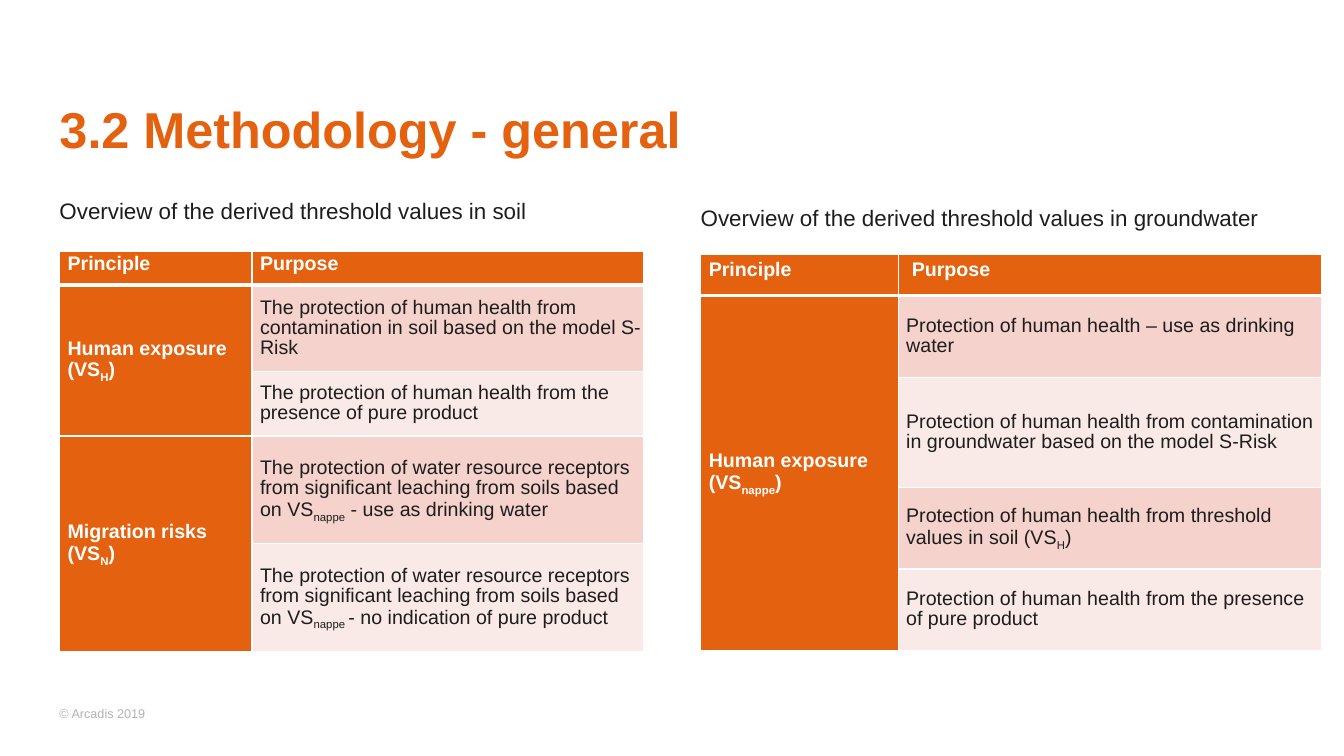
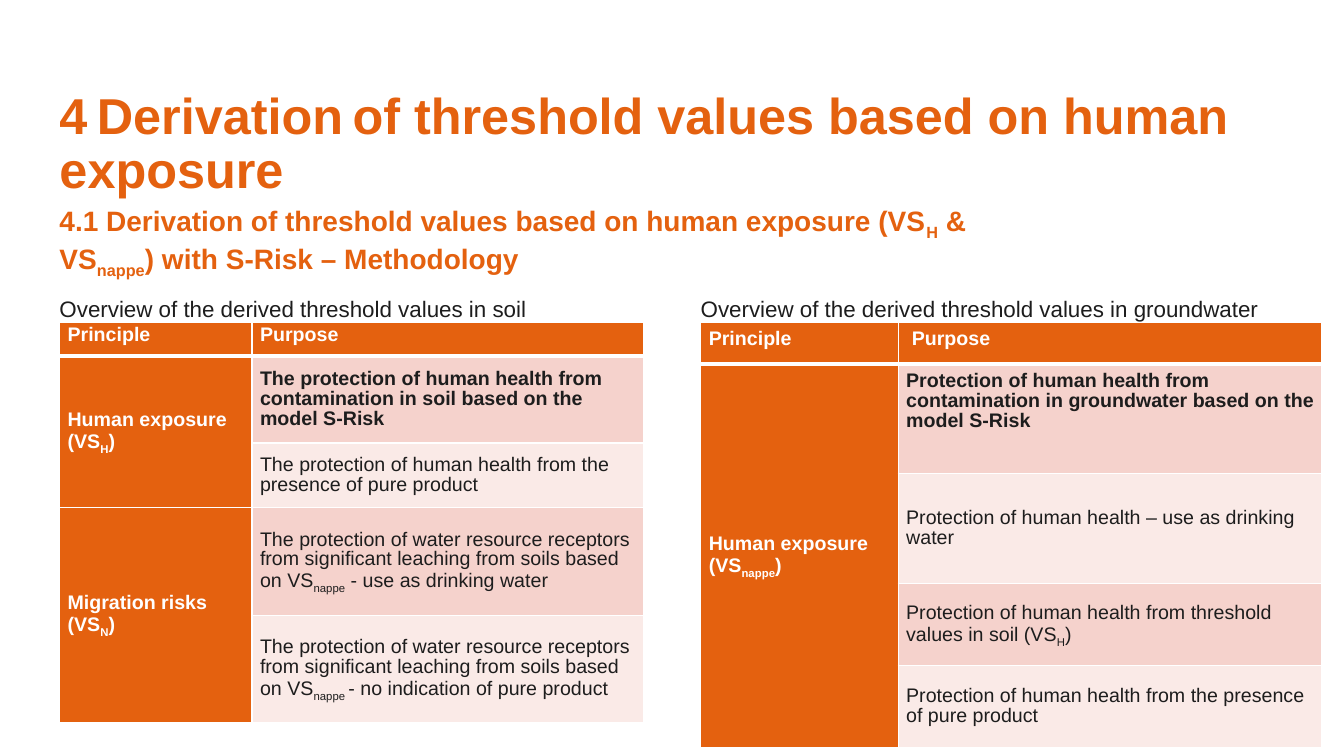
from dataclasses import dataclass

from lxml import etree
from pptx import Presentation
from pptx.dml.color import RGBColor
from pptx.enum.text import MSO_ANCHOR, MSO_AUTO_SIZE, PP_ALIGN
from pptx.oxml.ns import qn
from pptx.util import Pt

TOP, MIDDLE = MSO_ANCHOR.TOP, MSO_ANCHOR.MIDDLE
LEFT = PP_ALIGN.LEFT
FIXED_SIZE = MSO_AUTO_SIZE.NONE
TITLE_ONLY = 5


@dataclass(frozen=True)
class Theme:
    font: str = "Arial"
    orange: str = "E4610F"
    ink: str = "1D1D1D"
    grey: str = "B3B3B3"
    white: str = "FFFFFF"
    bands: tuple = ("F5D2CC", "FAEAE7")
    title_size: int = 36
    title_gap_size: int = 24
    subtitle_size: int = 20
    caption_size: int = 16
    table_size: int = 14
    footer_size: int = 9
    tight: float = 0.9
    padding: float = 5.76
    thin: int = 1
    thick: int = 3


@dataclass(frozen=True)
class Overview:
    """A caption and its table; groups pair a principle with (purpose, height) rows."""
    medium: str
    left: float
    caption_top: float
    table_top: float
    columns: tuple
    header_height: float
    groups: tuple
    purpose_inset: float = 0
    emphasise_first: bool = False
    first_anchor: int = MIDDLE


class Deck:
    def __init__(self, theme):
        self.theme = theme
        self.presentation = Presentation()
        self.presentation.slide_width = Pt(960)
        self.presentation.slide_height = Pt(540)
        self.slide = None

    def set_text(self, frame, marked, size, color, bold=False, spacing=1.0, marked_size=None):
        """Set text whose parts between ~ marks are subscripts, or take marked_size."""
        paragraph = frame.paragraphs[0]
        paragraph.alignment = LEFT
        paragraph.line_spacing = spacing
        for index, part in enumerate(marked.split("~")):
            if not part:
                continue
            run = paragraph.add_run()
            run.text = part
            special = index % 2 == 1
            part_size = marked_size if special and marked_size else size
            look = {"name": self.theme.font, "size": Pt(part_size), "bold": bold}
            for name, value in look.items():
                setattr(run.font, name, value)
            run.font.color.rgb = RGBColor.from_string(color)
            if special and not marked_size:
                run._r.get_or_add_rPr().set("baseline", "-25000")

    def set_frame(self, frame):
        layout = {"margin_left": 0, "margin_top": 0, "margin_right": 0, "margin_bottom": 0,
                  "word_wrap": True, "auto_size": FIXED_SIZE, "vertical_anchor": TOP}
        for name, value in layout.items():
            setattr(frame, name, value)

    def add_text(self, marked, left, top, width, height, size, color, bold=False):
        box = self.slide.shapes.add_textbox(Pt(left), Pt(top), Pt(width), Pt(height))
        self.set_frame(box.text_frame)
        self.set_text(box.text_frame, marked, size, color, bold)

    def add_slide(self, title, title_top):
        theme = self.theme
        layout = self.presentation.slide_layouts[TITLE_ONLY]
        self.slide = self.presentation.slides.add_slide(layout)
        heading = self.slide.shapes.title
        place = {"left": 42.5, "top": title_top, "width": 872.5, "height": 39.5}
        for name, value in place.items():
            setattr(heading, name, Pt(value))
        self.set_frame(heading.text_frame)
        self.set_text(heading.text_frame, title, theme.title_size, theme.orange, True,
                      theme.tight, theme.title_gap_size)
        self.add_text("© Arcadis 2019", 42.5, 504.5, 278, 11, theme.footer_size, theme.grey)

    def add_subtitle(self, marked):
        self.add_text(marked, 42.5, 145.5, 682, 48, self.theme.subtitle_size,
                      self.theme.orange, True)

    def set_borders(self, cell, top, bottom):
        properties = cell._tc.get_or_add_tcPr()
        thin = self.theme.thin
        for tag, width in {"lnL": thin, "lnR": thin, "lnT": top, "lnB": bottom}.items():
            line = etree.SubElement(properties, qn("a:" + tag), w=str(Pt(width)))
            fill = etree.SubElement(line, qn("a:solidFill"))
            etree.SubElement(fill, qn("a:srgbClr"), val=self.theme.white)

    def style_cell(self, cell, row, color):
        theme = self.theme
        self.set_borders(cell, theme.thick if row == 1 else theme.thin,
                         theme.thick if row == 0 else theme.thin)
        cell.fill.solid()
        cell.fill.fore_color.rgb = RGBColor.from_string(color)
        layout = {"margin_left": Pt(theme.padding), "margin_right": 0,
                  "margin_top": Pt(theme.padding if row else 0),
                  "margin_bottom": Pt(theme.padding), "vertical_anchor": MIDDLE}
        for name, value in layout.items():
            setattr(cell, name, value)

    def set_cell_text(self, cell, marked, color, bold):
        self.set_text(cell.text_frame, marked, self.theme.table_size, color, bold,
                      self.theme.tight)

    def add_table(self, overview):
        theme = self.theme
        purposes = [entry for _, entries in overview.groups for entry in entries]
        heights = [overview.header_height] + [height for _, height in purposes]
        table = self.slide.shapes.add_table(
            len(heights), 2, Pt(overview.left), Pt(overview.table_top),
            Pt(sum(overview.columns)), Pt(sum(heights))).table
        table.horz_banding = False
        for column, width in zip(table.columns, overview.columns):
            column.width = Pt(width)
        for row, height in enumerate(heights):
            table.rows[row].height = Pt(height)
            band = theme.bands[(row - 1) % 2] if row else theme.orange
            for column, color in enumerate((theme.orange, band)):
                self.style_cell(table.cell(row, column), row, color)

        for column, heading in enumerate(("Principle", "Purpose")):
            self.set_cell_text(table.cell(0, column), heading, theme.white, True)
        table.cell(0, 1).margin_left = Pt(theme.padding + overview.purpose_inset)
        first = 1
        for principle, entries in overview.groups:
            label = table.cell(first, 0)
            label.merge(table.cell(first + len(entries) - 1, 0))
            self.set_cell_text(label, principle, theme.white, True)
            first += len(entries)
        for row, (purpose, _) in enumerate(purposes, 1):
            bold = overview.emphasise_first and row == 1
            self.set_cell_text(table.cell(row, 1), purpose, theme.ink, bold)
        table.cell(1, 1).vertical_anchor = overview.first_anchor

    def add_overview(self, overview):
        self.add_text("Overview of the derived threshold values in " + overview.medium,
                      overview.left, overview.caption_top, 417, 19.5,
                      self.theme.caption_size, self.theme.ink)
        self.add_table(overview)


LEACHING = ("The protection of water resource receptors from significant leaching "
            "from soils based on VS")
SOIL = {
    "medium": "soil", "left": 42.5, "columns": (137.5, 279.5), "header_height": 24,
    "groups": (
        ("Human exposure (VS~H~)", (
            ("The protection of human health from contamination in soil "
             "based on the model S-Risk", 62),
            ("The protection of human health from the presence of pure product", 46))),
        ("Migration risks (VS~N~)", (
            (LEACHING + "~nappe~ - use as drinking water", 77),
            (LEACHING + "~nappe ~- no indication of pure product", 77)))),
}
DRINKING = "Protection of human health – use as drinking water"
CONTAMINATION = ("Protection of human health from contamination in groundwater "
                 "based on the model S-Risk")
GROUNDWATER = {
    "medium": "groundwater", "left": 500.5, "columns": (141, 302.5),
    "header_height": 29.5, "purpose_inset": 4,
}


def groundwater_groups(*leading):
    """Put the leading purposes before the two that close every groundwater table."""
    closing = (("Protection of human health from threshold values in soil (VS~H~)", 58.5),
               ("Protection of human health from the presence of pure product", 58.5))
    return (("Human exposure (VS~nappe~)", leading + closing),)


def main():
    deck = Deck(Theme())

    deck.add_slide("3.2 Methodology - general", 75)
    deck.add_overview(Overview(**SOIL, caption_top=140.5, table_top=179.5))
    deck.add_overview(Overview(
        **GROUNDWATER, caption_top=145.5, table_top=181.5,
        groups=groundwater_groups((DRINKING, 58.5), (CONTAMINATION, 78.5))))

    deck.add_slide("4~ ~Derivation~ ~of threshold values based on human exposure", 65)
    lowered = {"caption_top": 210.5, "table_top": 230.5, "emphasise_first": True}
    deck.add_overview(Overview(**SOIL, **lowered))
    deck.add_overview(Overview(
        **GROUNDWATER, **lowered, first_anchor=TOP,
        groups=groundwater_groups((CONTAMINATION, 78.5), (DRINKING, 78.5))))
    deck.add_subtitle("4.1 Derivation of threshold values based on human exposure "
                      "(VS~H~ & VS~nappe~) with S-Risk – Methodology")

    deck.presentation.save("out.pptx")


if __name__ == "__main__":
    main()
